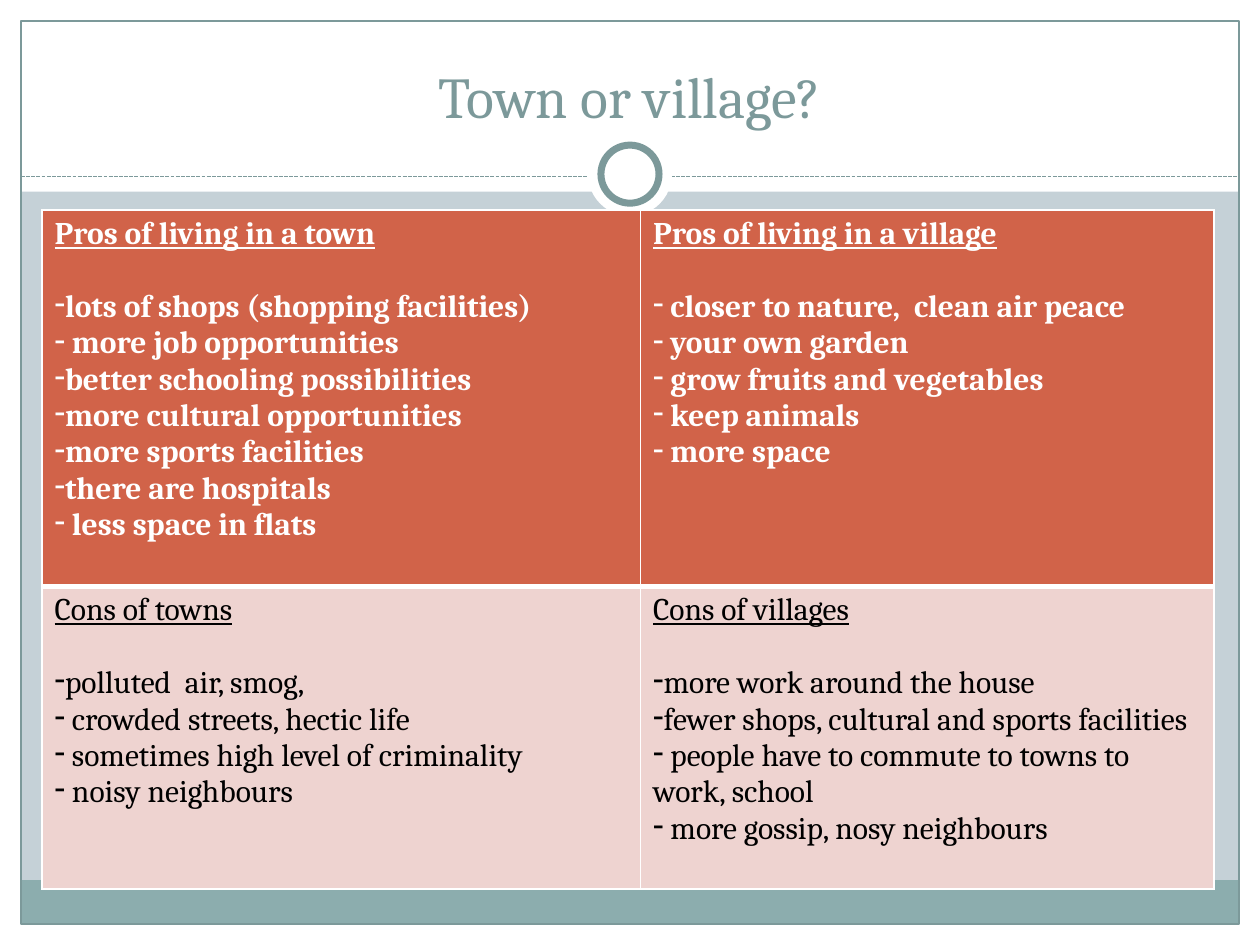
from lxml import etree
from pptx import Presentation
from pptx.dml.color import RGBColor
from pptx.enum.dml import MSO_LINE
from pptx.enum.shapes import MSO_CONNECTOR, MSO_SHAPE
from pptx.enum.text import MSO_ANCHOR, PP_ALIGN
from pptx.oxml.ns import qn
from pptx.util import Pt

WHITE = RGBColor(0xFF, 0xFF, 0xFF)
BLACK = RGBColor(0x00, 0x00, 0x00)
MIST = RGBColor(0xC5, 0xD1, 0xD7)
TEAL = RGBColor(0x8C, 0xAD, 0xAE)
SLATE = RGBColor(0x7C, 0x99, 0x9A)
RUST = RGBColor(0xD1, 0x63, 0x49)
PINK = RGBColor(0xEE, 0xD3, 0xD0)
FONT = "Cambria"

ROWS = [
    (RUST, WHITE, True, 215, [
        ("Pros of living in a town", [
            "lots of shops (shopping facilities)", " more job opportunities",
            "better schooling possibilities", "more cultural opportunities",
            "more sports facilities", "there are hospitals",
            " less space in flats"]),
        ("Pros of living in a village", [
            " closer to nature,  clean air peace", " your own garden",
            " grow fruits and vegetables", " keep animals", " more space"]),
    ]),
    (PINK, BLACK, False, 173, [
        ("Cons of towns", [
            "polluted  air, smog,", " crowded streets, hectic life",
            " sometimes high level of criminality", " noisy neighbours"]),
        ("Cons of villages", [
            "more work around the house",
            "fewer shops, cultural and sports facilities",
            " people have to commute to towns to work, school",
            " more gossip, nosy neighbours"]),
    ]),
]


def add_block(shape, x, y, w, h, fill=None, line=None, weight=0.75):
    sp = s.shapes.add_shape(shape, Pt(x), Pt(y), Pt(w), Pt(h))
    sp.shadow.inherit = False
    if fill is None:
        sp.fill.background()
    else:
        sp.fill.solid()
        sp.fill.fore_color.rgb = fill
    if line is None:
        sp.line.fill.background()
    else:
        sp.line.color.rgb = line
        sp.line.width = Pt(weight)


def add_border(cell, side, weight):
    ln = etree.SubElement(cell._tc.get_or_add_tcPr(), qn(f"a:ln{side}"), w=str(Pt(weight)))
    fill = etree.SubElement(ln, qn("a:solidFill"))
    etree.SubElement(fill, qn("a:srgbClr"), val=str(WHITE))


prs = Presentation()
prs.slide_width, prs.slide_height = Pt(720), Pt(540)
s = prs.slides.add_slide(prs.slide_layouts[6])
s.background.fill.solid()
s.background.fill.fore_color.rgb = MIST

# Margins, footer band and frame
for x, y, w, h, color in [
    (0, 528, 720, 12, WHITE),
    (0, 0, 720, 109.5, WHITE),
    (0, 0, 12, 540, WHITE),
    (708, 0, 12, 540, WHITE),
    (12, 503, 696, 25, TEAL),
]:
    add_block(MSO_SHAPE.RECTANGLE, x, y, w, h, color)
add_block(MSO_SHAPE.RECTANGLE, 12, 12, 696, 516, line=SLATE)

# Dashed divider with the ring at its centre
divider = s.shapes.add_connector(MSO_CONNECTOR.STRAIGHT, Pt(12), Pt(100.8), Pt(708), Pt(100.8))
divider.line.color.rgb = SLATE
divider.line.width = Pt(0.75)
divider.line.dash_style = MSO_LINE.SQUARE_DOT
etree.SubElement(divider._element.spPr, qn("a:effectLst"))
add_block(MSO_SHAPE.OVAL, 336, 75.5, 48, 48, WHITE)
add_block(MSO_SHAPE.OVAL, 343.4, 82.9, 33.2, 33.2, WHITE, SLATE, 4)

# Title
tf = s.shapes.add_textbox(Pt(24), Pt(18), Pt(672), Pt(60)).text_frame
tf.word_wrap = True
tf.vertical_anchor = MSO_ANCHOR.BOTTOM
p = tf.paragraphs[0]
p.text = "Town or village?"
p.alignment = PP_ALIGN.CENTER
p.font.name, p.font.size = FONT, Pt(33)
p.font.color.rgb = SLATE

# Pros and cons
table = s.shapes.add_table(2, 2, Pt(24), Pt(120), Pt(669.6), Pt(388)).table
for col, width in zip(table.columns, (342, 327.6)):
    col.width = Pt(width)
for i, (fill, color, bold, height, cells) in enumerate(ROWS):
    table.rows[i].height = Pt(height)
    for j, (heading, points) in enumerate(cells):
        cell = table.cell(i, j)
        for side, weight in zip("LRTB", (1, 1, 1, 3) if i == 0 else (1, 1, 3, 1)):
            add_border(cell, side, weight)
        cell.fill.solid()
        cell.fill.fore_color.rgb = fill
        tf = cell.text_frame
        for k, text in enumerate([heading] + points):
            p = tf.add_paragraph() if k else tf.paragraphs[0]
            p.text = text
            p.font.name, p.font.size = FONT, Pt(18)
            p.font.bold = bold
            p.font.color.rgb = color
            if k == 0:
                p.font.underline = True
                p.space_after = Pt(20.8)
            else:
                pPr = p._p.get_or_add_pPr()
                pPr.set("marL", "0")
                pPr.set("indent", "0")
                bullet = etree.Element(qn("a:buChar"), char="-")
                pPr.insert(0, bullet)

prs.save("out.pptx")
